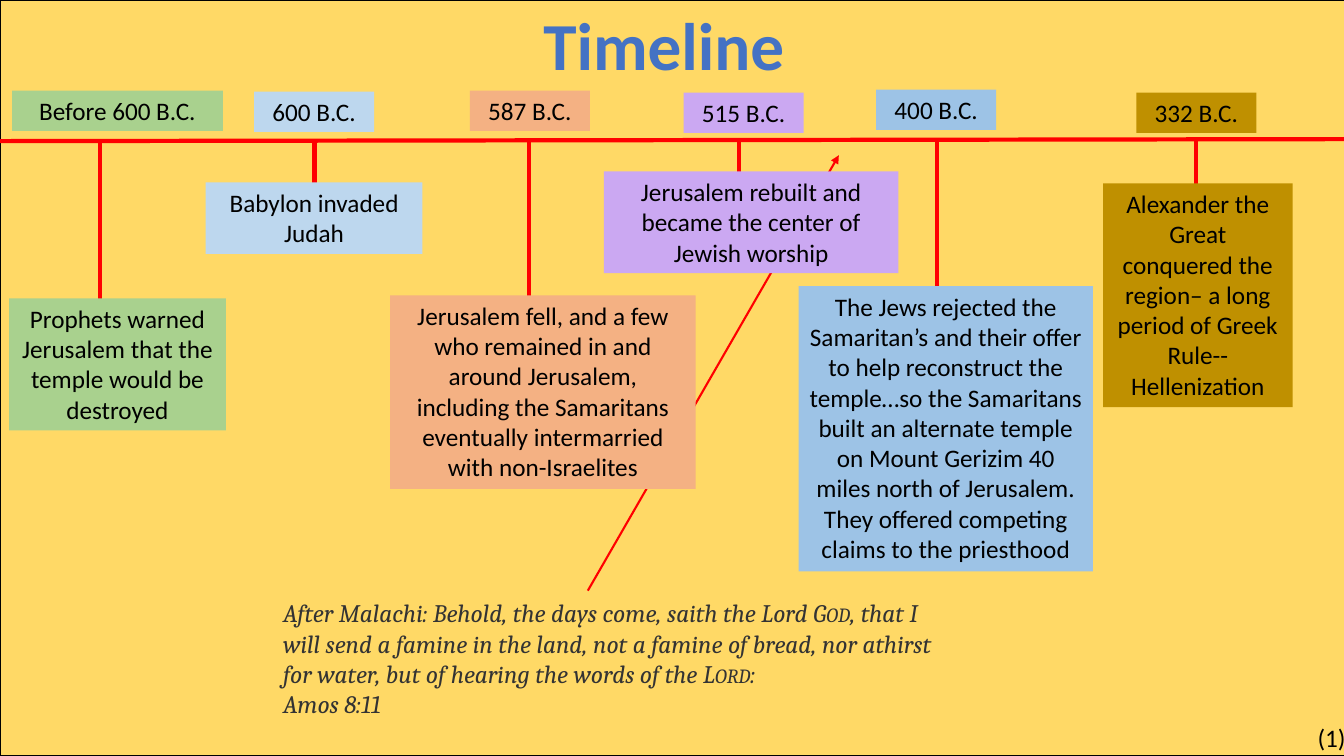
from lxml.etree import SubElement
from pptx import Presentation
from pptx.dml.color import RGBColor
from pptx.enum.shapes import MSO_CONNECTOR as CONN, MSO_SHAPE as SHAPE
from pptx.enum.text import MSO_ANCHOR as ANCHOR, MSO_AUTO_SIZE as AUTO, PP_ALIGN as ALIGN
from pptx.oxml.ns import qn
from pptx.util import Inches, Pt

GOLD = RGBColor(0xFF, 0xD9, 0x66)
BLACK = RGBColor(0, 0, 0)
RED = RGBColor(0xFF, 0, 0)
TITLE_BLUE = RGBColor(0x44, 0x72, 0xC4)
GREY = RGBColor(0x33, 0x33, 0x33)
GREEN = RGBColor(0xA9, 0xD1, 0x8E)
PALE_BLUE = RGBColor(0xBD, 0xD7, 0xEE)
SKY = RGBColor(0x9D, 0xC3, 0xE6)
BRONZE = RGBColor(0xBF, 0x90, 0x00)
PEACH = RGBColor(0xF4, 0xB1, 0x83)
LILAC = RGBColor(0xCB, 0xA8, 0xF2)

AXIS_Y = 1.38
LABEL_H = 0.4
BODY = {"name": "Calibri", "size": Pt(18)}
QUOTE = {"name": "Cambria", "size": Pt(18), "italic": True}
HEADING = {"name": "Calibri", "size": Pt(48), "bold": True}

EARLY_AND_LATE = [
    ("Before 600 B.C.", GREEN, (0.12, 0.9, 2.09), 0.99, (0.09, 2.96, 2.15, 1.31),
     ["Prophets warned Jerusalem that the temple would be destroyed"]),
    ("600 B.C.", PALE_BLUE, (2.52, 0.91, 1.19), 3.12, (2.04, 1.81, 2.15, 0.71),
     ["Babylon invaded Judah"]),
    ("400 B.C.", SKY, (8.69, 0.89, 1.19), 9.29, (7.92, 2.84, 2.92, 2.83),
     ["The Jews rejected the Samaritan’s and their offer to help reconstruct the "
      "temple…so the Samaritans built an alternate temple on Mount Gerizim 40 miles "
      "north of Jerusalem.",
      "They offered competing claims to the priesthood"]),
    ("332 B.C.", BRONZE, (11.27, 0.92, 1.19), 11.86, (10.94, 1.82, 1.88, 2.22),
     ["Alexander the Great conquered the region– a long period of Greek "
      "Rule--Hellenization"]),
]
MIDDLE = [
    ("587 B.C.", PEACH, (4.66, 0.9, 1.19), 5.25, (3.87, 2.93, 3.03, 1.92),
     ["Jerusalem fell, and a few who remained in and around Jerusalem, including the "
      "Samaritans eventually intermarried with non-Israelites"]),
    ("515 B.C.", LILAC, (6.78, 0.92, 1.19), 7.33, (5.99, 1.7, 2.92, 1.01),
     ["Jerusalem rebuilt and became the center of Jewish worship"]),
]
VERSE = [
    [("After Malachi: Behold, the days come, saith the Lord ", False), ("God", True),
     (", that I will send a famine in the land, not a famine of bread, nor "
      "athirst for water, but of hearing the words of the ", False),
     ("Lord", True), (":", False)],
    [("Amos 8:11", False)],
]


class TimelineSlide:
    """Draws timeline elements on one slide in a shared style."""

    def __init__(self, prs):
        self.s = prs.slides.add_slide(prs.slide_layouts[5])

    def fill_text(self, sp, paragraphs, style, color, align, wrap=True):
        tf = sp.text_frame
        frame = {"word_wrap": wrap, "auto_size": AUTO.SHAPE_TO_FIT_TEXT,
                 "vertical_anchor": ANCHOR.TOP}
        for key, value in frame.items():
            setattr(tf, key, value)
        for i, runs in enumerate(paragraphs):
            p = tf.add_paragraph() if i else tf.paragraphs[0]
            p.alignment = align
            for text, small_caps in runs:
                r = p.add_run()
                r.text = text
                for key, value in style.items():
                    setattr(r.font, key, value)
                r.font.color.rgb = color
                if small_caps:
                    r._r.get_or_add_rPr().set("cap", "small")

    def rect(self, at, fill, line=None):
        sp = self.s.shapes.add_shape(SHAPE.RECTANGLE, *map(Inches, at))
        sp.shadow.inherit = False
        sp.fill.solid()
        sp.fill.fore_color.rgb = fill
        if line is None:
            sp.line.fill.background()
        else:
            sp.line.color.rgb = line
            sp.line.width = Pt(1)
        return sp

    def box(self, at, fill, lines):
        sp = self.rect(at, fill)
        self.fill_text(sp, [[(line, False)] for line in lines], BODY, BLACK, ALIGN.CENTER)

    def text(self, at, paragraphs, style, color):
        sp = self.s.shapes.add_textbox(*map(Inches, at))
        self.fill_text(sp, paragraphs, style, color, ALIGN.LEFT)

    def title(self, at, text):
        sp = self.s.shapes.title
        self.s.shapes.element.append(sp.element)
        for key, value in zip(("left", "top", "width", "height"), at):
            setattr(sp, key, Inches(value))
        self.fill_text(sp, [[(text, False)]], HEADING, TITLE_BLUE, ALIGN.CENTER, wrap=False)
        rPr = sp.text_frame.paragraphs[0].runs[0]._r.get_or_add_rPr()
        ln = SubElement(rPr, qn("a:ln"), w=str(Pt(0.75)))
        SubElement(SubElement(ln, qn("a:solidFill")), qn("a:srgbClr"), val="FFFFFF")
        rPr.insert(0, ln)

    def line(self, start, end, width=3, arrow=False):
        c = self.s.shapes.add_connector(CONN.STRAIGHT, *map(Inches, start + end))
        c.line.color.rgb = RED
        c.line.width = Pt(width)
        spPr = c.element.spPr
        if arrow:
            SubElement(spPr.find(qn("a:ln")), qn("a:tailEnd"), type="triangle")
        SubElement(spPr, qn("a:effectLst"))

    def event(self, date, fill, label, stem_x, at, lines):
        self.line((stem_x, at[1] + 0.1), (stem_x, AXIS_Y))
        self.box(label + (LABEL_H,), fill, [date])
        self.box(at, fill, lines)


def main():
    prs = Presentation()
    prs.slide_width, prs.slide_height = Inches(13.33), Inches(7.5)
    slide = TimelineSlide(prs)
    slide.rect((0, 0, 13.48, 7.5), GOLD, BLACK)
    slide.title((5.28, -0.02, 2.61, 0.91), "Timeline")
    slide.line((0, 1.4), (13.48, AXIS_Y))
    for event in EARLY_AND_LATE:
        slide.event(*event)
    slide.text((12.97, 7.12, 0.5, 0.4), [[("(1)", False)]], BODY, BLACK)
    slide.text((2.71, 5.88, 6.67, 1.31), VERSE, QUOTE, GREY)
    slide.line((5.83, 5.86), (8.32, 1.54), width=1.5, arrow=True)
    for event in MIDDLE:
        slide.event(*event)
    prs.save("out.pptx")


if __name__ == "__main__":
    main()
